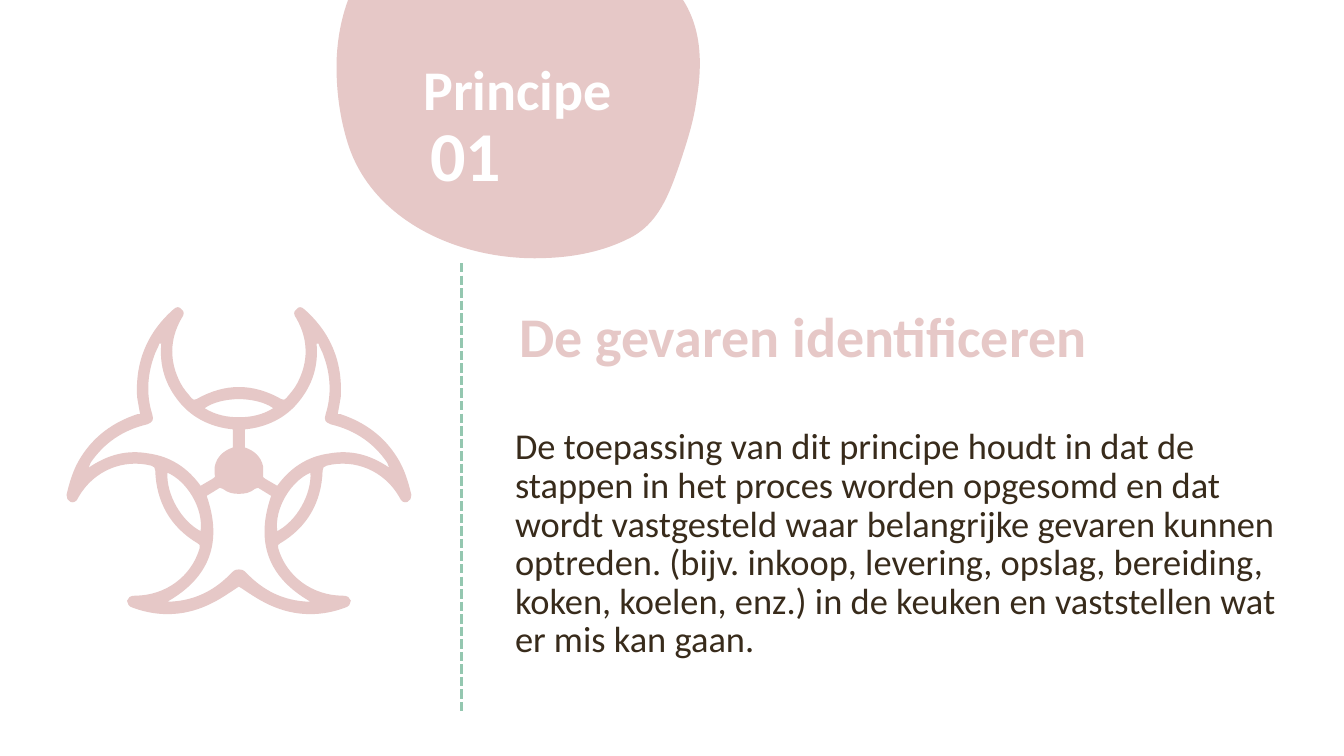
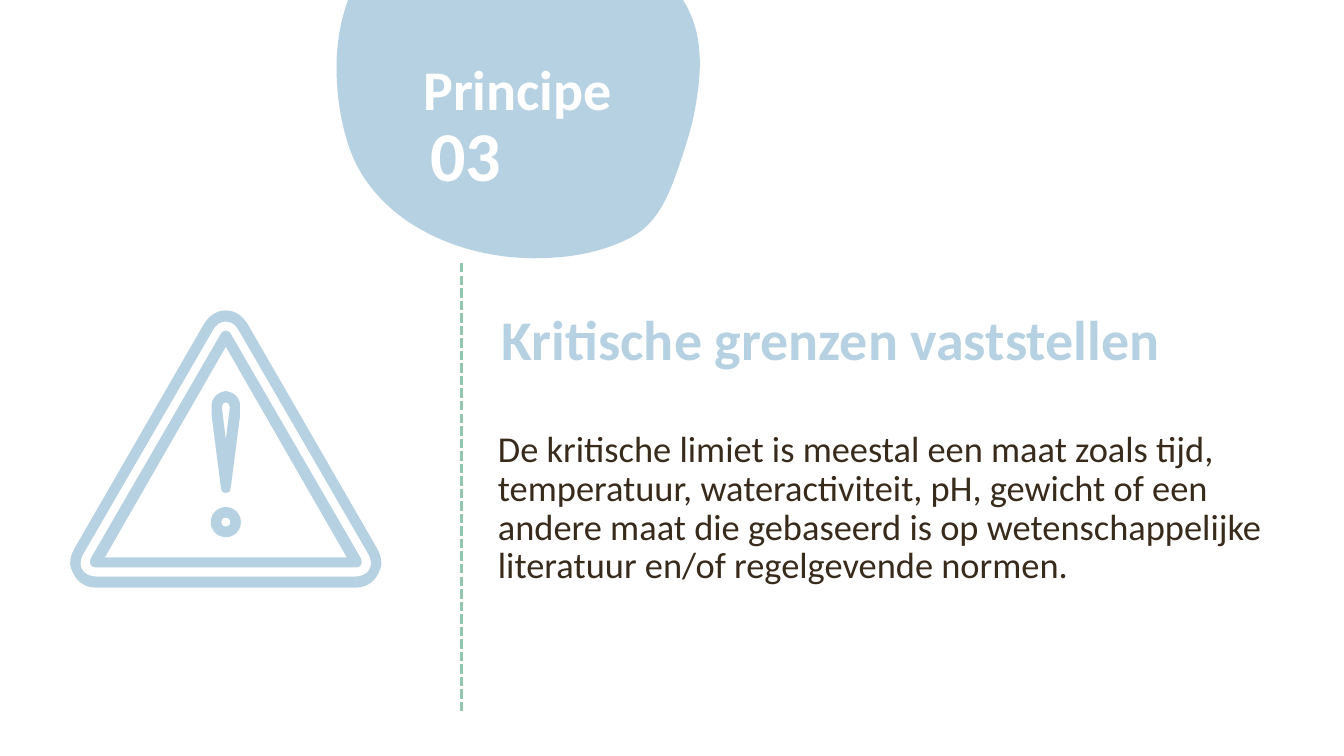
"""Build two slides that each present one food-safety principle."""
from lxml import etree
from pptx import Presentation
from pptx import util as u
from pptx.dml.color import RGBColor
from pptx.enum import dml, shapes
from pptx.oxml.ns import qn

COLORS = {"rose": "E6C8C7", "sky": "B6D1E1", "mint": "94C7B0", "ink": "382B1B", "white": "FFFFFF"}

BLOB = [
    (6.91, 0.98), (6.99, 0.5, 6.94, 0.02, 6.48, -0.3), (6.03, -0.6, 5.34, -0.87, 4.79, -0.87),
    (3.85, -0.89, 3.38, -0.23, 3.34, 0.57), (3.33, 0.84, 3.36, 1.12, 3.44, 1.39),
    (3.67, 2.19, 4.57, 2.6, 5.42, 2.56), (5.71, 2.55, 5.99, 2.49, 6.23, 2.37),
    (6.53, 2.23, 6.64, 1.92, 6.74, 1.63), (6.81, 1.42, 6.88, 1.21, 6.91, 0.98),
]

HAZARD_AXIS = 2.37
HAZARD_HALVES = [
    [
        (2.37, 5.82), (2.29, 5.87, 2.21, 5.93, 2.11, 5.98), (1.86, 6.11, 1.59, 6.13, 1.32, 6.03),
        (1.28, 6.02, 1.26, 5.99, 1.26, 5.96), (1.27, 5.93, 1.29, 5.91, 1.34, 5.91),
        (1.64, 5.91, 1.9, 5.72, 1.98, 5.44), (1.99, 5.41, 1.98, 5.4, 1.96, 5.39),
        (1.69, 5.23, 1.55, 4.98, 1.54, 4.67), (1.54, 4.64, 1.53, 4.63, 1.5, 4.62),
        (1.22, 4.55, 0.93, 4.67, 0.78, 4.93), (0.76, 4.98, 0.73, 4.99, 0.7, 4.98),
        (0.67, 4.97, 0.66, 4.94, 0.66, 4.91), (0.69, 4.78, 0.73, 4.65, 0.8, 4.54),
        (0.93, 4.33, 1.12, 4.19, 1.36, 4.11), (1.39, 4.11), (1.38, 4.05, 1.37, 4, 1.36, 3.94),
        (1.34, 3.59, 1.46, 3.3, 1.72, 3.07), (1.75, 3.04, 1.78, 3.04, 1.8, 3.07),
        (1.83, 3.09, 1.83, 3.12, 1.8, 3.16), (1.68, 3.37, 1.68, 3.59, 1.79, 3.8),
        (1.82, 3.86, 1.86, 3.9, 1.9, 3.95), (1.91, 3.97, 1.93, 3.97, 1.95, 3.96),
        (2.09, 3.88, 2.23, 3.84, 2.37, 3.84),
    ],
    [
        (2.37, 4.9), (2.31, 4.9, 2.26, 4.89, 2.21, 4.85), (2.18, 4.84), (2.05, 4.92),
        (2.21, 5.38, 2.08, 5.73, 1.66, 5.97), (1.68, 5.97), (1.93, 5.96, 2.13, 5.86, 2.3, 5.68),
        (2.33, 5.65, 2.35, 5.65, 2.37, 5.65),
    ],
    [(2.37, 3.96), (2.25, 3.96, 2.11, 3.99, 2.03, 4.05), (2.14, 4.12, 2.26, 4.14, 2.37, 4.14)],
]
HAZARD_PAIRS = [
    [
        (1.6, 3.41), (1.58, 3.41), (1.57, 3.45, 1.54, 3.49, 1.53, 3.53),
        (1.46, 3.72, 1.45, 3.92, 1.51, 4.11), (1.53, 4.17, 1.51, 4.19, 1.46, 4.21),
        (1.21, 4.27, 1.03, 4.4, 0.9, 4.59), (0.88, 4.64), (1.07, 4.51, 1.26, 4.46, 1.48, 4.5),
        (1.69, 4.53, 1.86, 4.64, 1.99, 4.82), (2.11, 4.75), (2.13, 4.74, 2.14, 4.73, 2.13, 4.7),
        (2.13, 4.63), (2.15, 4.53, 2.22, 4.47, 2.31, 4.44), (2.31, 4.26),
        (2.1, 4.24, 1.91, 4.15, 1.78, 3.99), (1.64, 3.82, 1.58, 3.63, 1.6, 3.41),
    ],
    [(1.66, 4.69), (1.65, 4.91, 1.8, 5.17, 1.99, 5.27), (2.02, 5.04, 1.85, 4.77, 1.66, 4.69)],
]

WARNING_AXIS = 2.24
WARNING_FRAME = [
    [
        (2.24, 5.83), (0.96, 5.83), (0.83, 5.83, 0.75, 5.76, 0.71, 5.65),
        (0.68, 5.58, 0.7, 5.51, 0.74, 5.44), (2.02, 3.22), (2.07, 3.14, 2.14, 3.08, 2.24, 3.08),
    ],
    [
        (2.24, 5.72), (0.96, 5.72), (0.87, 5.72, 0.8, 5.67, 0.8, 5.59),
        (0.8, 5.56, 0.81, 5.52, 0.83, 5.49), (2.11, 3.28), (2.14, 3.22, 2.19, 3.19, 2.24, 3.19),
    ],
]
WARNING_INNER = [
    [(2.24, 5.63), (0.95, 5.63), (0.9, 5.63, 0.88, 5.59, 0.9, 5.54), (2.18, 3.33),
     (2.2, 3.29, 2.22, 3.28, 2.24, 3.28)],
    [(2.24, 5.53), (1.04, 5.53), (2.24, 3.44)],
]
WARNING_MARK = [
    [(2.24, 4.89), (2.2, 4.89, 2.19, 4.86, 2.19, 4.83), (2.1, 4.13), (2.1, 4.04),
     (2.09, 3.96, 2.15, 3.89, 2.24, 3.88)],
    [(2.24, 4.36), (2.2, 4.04), (2.2, 4.01, 2.22, 3.99, 2.24, 3.99)],
]


def mirror(contour, axis):
    return [tuple(v if i % 2 else 2 * axis - v for i, v in enumerate(segment))
            for segment in contour]


def backwards(contour):
    segments = []
    for before, segment in zip(contour[-2::-1], contour[:0:-1]):
        controls = segment[:-2]
        segments.append(controls[2:] + controls[:2] + before[-2:])
    return segments


def symmetric(halves, axis):
    return [half + mirror(backwards(half), axis) for half in halves]


class Principle:
    def __init__(self, deck, accent):
        self.page = deck.slides.add_slide(deck.slide_layouts[6])
        self.accent = accent

    def paint(self, shape):
        shape.shadow.inherit = False
        shape.fill.solid()
        shape.fill.fore_color.rgb = RGBColor.from_string(COLORS[self.accent])
        shape.line.fill.background()
        return shape

    def outline(self, contours):
        anchors = [[tuple(map(u.Inches, segment[-2:])) for segment in contour]
                   for contour in contours]
        builder = self.page.shapes.build_freeform(*anchors[0][0])
        builder.add_line_segments(anchors[0][1:])
        for points in anchors[1:]:
            builder.move_to(*points[0])
            builder.add_line_segments(points[1:])
        shape = builder.convert_to_shape()
        segments = [segment for contour in contours for segment in contour[1:]]
        edges = list(shape._element.iter(qn("a:lnTo")))
        for edge, segment in zip(edges, segments):
            if len(segment) == 6:
                self.bend(edge, segment, shape.left, shape.top)
        return self.paint(shape)

    def bend(self, edge, segment, left, top):
        edge.tag = qn("a:cubicBezTo")
        for place in (0, 1):
            x, y = segment[2 * place:2 * place + 2]
            control = etree.Element(
                qn("a:pt"), x=str(u.Inches(x) - left), y=str(u.Inches(y) - top))
            edge.insert(place, control)

    def round(self, kind, left, top, size):
        return self.paint(self.page.shapes.add_shape(
            kind, u.Inches(left), u.Inches(top), u.Inches(size), u.Inches(size)))

    def group(self, *members):
        self.page.shapes.add_group_shape(members)

    def text(self, words, area, size, color, spacing, bold=True):
        box = self.page.shapes.add_textbox(*map(u.Inches, area))
        box.text_frame.word_wrap = True
        para = box.text_frame.paragraphs[0]
        para.text = words
        para.line_spacing = spacing
        para.font.name = "Calibri"
        para.font.size = u.Pt(size)
        para.font.bold = bold
        para.font.color.rgb = RGBColor.from_string(COLORS[color])
        return box

    def divider(self):
        x = u.Inches(4.58)
        line = self.page.shapes.add_connector(
            shapes.MSO_CONNECTOR.STRAIGHT, x, u.Inches(2.61), x, u.Inches(7.07))
        line.line.color.rgb = RGBColor.from_string(COLORS["mint"])
        line.line.width = u.Pt(2.25)
        line.line.dash_style = dml.MSO_LINE.SQUARE_DOT
        etree.SubElement(line._element.spPr, qn("a:effectLst"))

    def content(self, number, title, body, left, top):
        self.outline([BLOB])
        self.text(title, (left, top, 7.88, 1.87), 40, self.accent, u.Pt(40.2))
        self.group(
            self.text(number, (4.17, 1.15, 1.26, 0.94), 50, "white", 0.9),
            self.text("Principe", (4.1, 0.62, 2.26, 0.67), 40, "white", 0.8))
        self.text(body, (left - 0.04, top + 1.15, 8.1, 2.19), 26, "ink", u.Pt(27.6), bold=False)
        self.divider()

    def hazard_icon(self):
        sign = self.outline(symmetric(HAZARD_HALVES, HAZARD_AXIS) + HAZARD_PAIRS
                            + [mirror(pair, HAZARD_AXIS) for pair in HAZARD_PAIRS])
        self.group(sign, self.round(shapes.MSO_SHAPE.OVAL, 2.25, 4.55, 0.24))

    def warning_icon(self):
        parts = [self.outline(symmetric(halves, WARNING_AXIS))
                 for halves in (WARNING_FRAME, WARNING_INNER, WARNING_MARK)]
        dot = self.round(shapes.MSO_SHAPE.DONUT, 2.09, 5.03, 0.3)
        dot.adjustments[0] = 0.35
        self.group(*parts, dot)


def main():
    deck = Presentation()
    deck.slide_width, deck.slide_height = u.Inches(13.33), u.Inches(7.5)

    hazards = Principle(deck, "rose")
    hazards.content(
        "01", "De gevaren identificeren",
        "De toepassing van dit principe houdt in dat de stappen in het proces worden opgesomd en "
        "dat wordt vastgesteld waar belangrijke gevaren kunnen optreden. (bijv. inkoop, levering, "
        "opslag, bereiding, koken, koelen, enz.) in de keuken en vaststellen wat er mis kan gaan.",
        5.05, 3.05)
    hazards.hazard_icon()

    limits = Principle(deck, "sky")
    limits.content(
        "03", "Kritische grenzen vaststellen",
        "De kritische limiet is meestal een maat zoals tijd, temperatuur, wateractiviteit, pH, "
        "gewicht of een andere maat die gebaseerd is op wetenschappelijke literatuur en/of "
        "regelgevende normen.",
        4.88, 3.08)
    limits.warning_icon()

    deck.save("out.pptx")


if __name__ == "__main__":
    main()
